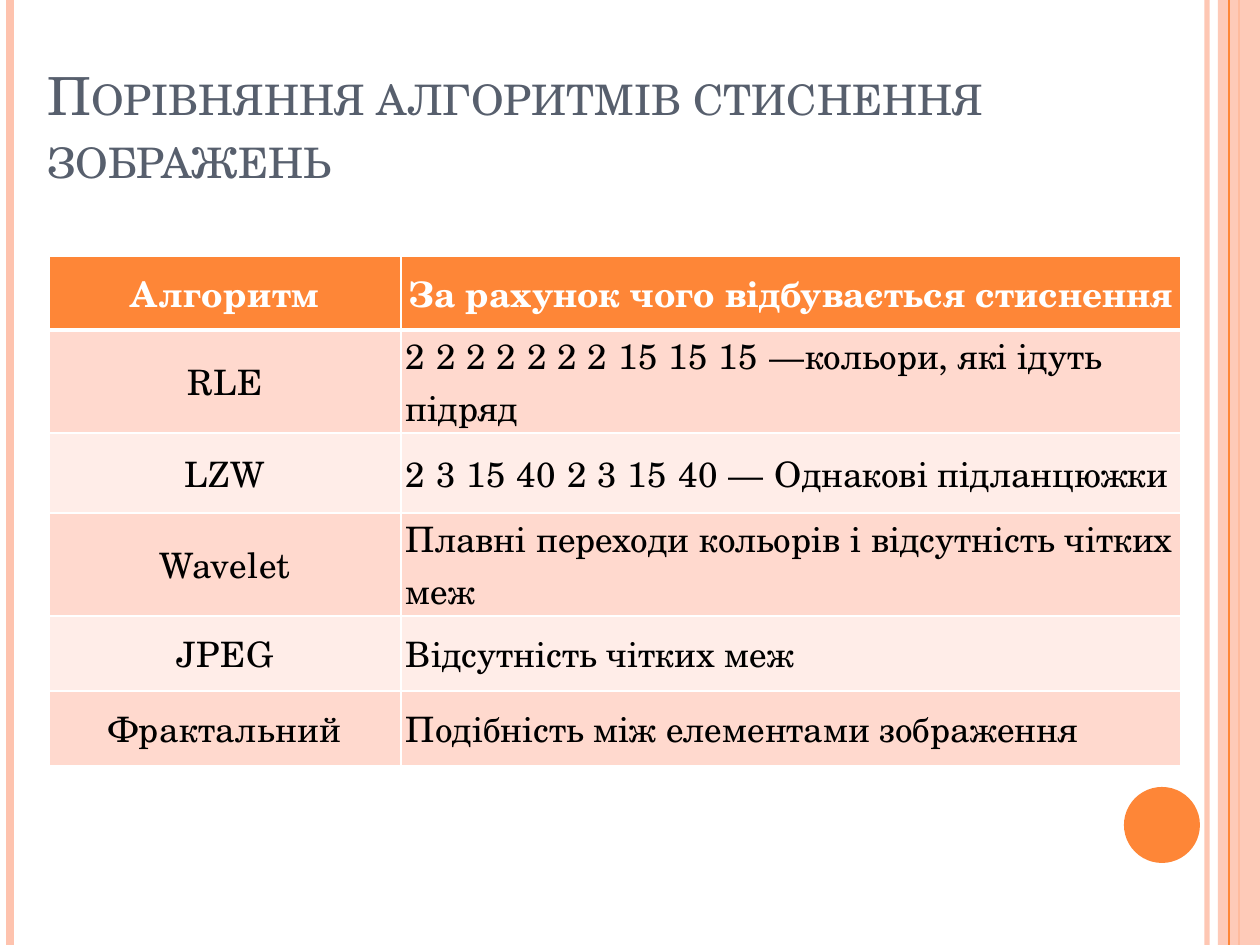
from dataclasses import dataclass

from pptx import Presentation, util as u
from pptx.dml.color import RGBColor
from pptx.enum import shapes, text
from pptx.oxml.ns import qn
from lxml import etree

SCALE = 914400 / 126


@dataclass(frozen=True)
class Theme:
    font: str = "TeX Gyre Schola"
    main: str = "FE8637"
    pale: str = "FEC3AE"
    title: str = "575F6D"
    bands: tuple = ("FFD9CE", "FFEDE8")
    white: str = "FFFFFF"
    black: str = "000000"
    head_size: int = 30
    cell_size: int = 20


T = Theme()
WIDE = 0.3  # letter spacing in points

# Each cell is a list of (words, letter spacing) runs
HEAD = [[("Алгоритм", WIDE)], [("За рахунок чого відбувається стиснення", 0)]]
BODY = [
    ("RLE", [("2 2 2 2 2 2 2 15 15 15 —", WIDE), ("кольори, які ідуть підряд", 0)]),
    ("LZW", [("2 3 15 40 2 3 15 40 — ", WIDE), ("Однакові підланцюжки", 0)]),
    ("Wavelet", [("Плавні переходи кольорів і відсутність чітких меж", 0)]),
    ("JPEG", [("Відсутність чітких меж", 0)]),
    ("Фрактальний", [("Подібність між елементами зображення", 0)]),
]
COLS = (352, 780)
ROWS = (74, 103, 80, 103, 75, 75)  # the taller rows hold two lines
INSET = 5


def px(*vals):
    return [u.Emu(round(v * SCALE)) for v in vals]


def rgb(code):
    return RGBColor.from_string(code)


def sub(node, tag, **attrs):
    item = etree.SubElement(node, qn(tag))
    for key, val in attrs.items():
        item.set(key, str(val))
    return item


def fade(part, percent):
    for color in part.iter(qn("a:srgbClr")):
        sub(color, "a:alpha", val=percent * 1000)


def add_run(para, words, size, color, bold=False, **attrs):
    run = para.add_run()
    run.text = words
    font = run.font
    font.name, font.size, font.bold = T.font, u.Pt(size), bold
    font.color.rgb = rgb(color)
    for key, val in attrs.items():
        run._r.get_or_add_rPr().set(key, str(val))


def add_rule(slide, x, color, weight, alpha=100):
    line = slide.shapes.add_connector(
        shapes.MSO_CONNECTOR.STRAIGHT, *px(x, 0, x, 945))
    line.line.color.rgb = rgb(color)
    line.line.width = u.Pt(weight)
    props = line._element.spPr
    if alpha < 100:
        fade(props, alpha)
    sub(props, "a:effectLst")


def add_solid(slide, kind, box, color, alpha=100):
    shape = slide.shapes.add_shape(kind, *px(*box))
    shape.shadow.inherit = False
    shape.fill.solid()
    shape.fill.fore_color.rgb = rgb(color)
    shape.line.fill.background()
    if alpha < 100:
        fade(shape._element.spPr, alpha)


def add_title(slide, words):
    frame = slide.shapes.add_textbox(*px(35, 38, 1171, 157)).text_frame
    frame.word_wrap = True
    frame.vertical_anchor = text.MSO_ANCHOR.BOTTOM
    add_run(frame.paragraphs[0], words, T.head_size, T.title, cap="small")


def set_edges(cell, top, bottom):
    props = cell._tc.get_or_add_tcPr()
    for side, weight in zip("LRTB", (1, 1, top, bottom)):
        edge = sub(props, "a:ln" + side, w=u.Pt(weight))
        sub(sub(edge, "a:solidFill"), "a:srgbClr", val=T.white)


def fill_cell(cell, runs, row, col):
    head = row == 0
    set_edges(cell, 3 if row == 1 else 1, 3 if head else 1)
    cell.fill.solid()
    cell.fill.fore_color.rgb = rgb(T.main if head else T.bands[(row - 1) % 2])
    cell.margin_left, cell.margin_right = px(INSET, INSET)
    cell.margin_top = cell.margin_bottom = 0
    cell.vertical_anchor = text.MSO_ANCHOR.MIDDLE
    para = cell.text_frame.paragraphs[0]
    centred = head or col == 0
    para.alignment = text.PP_ALIGN.CENTER if centred else text.PP_ALIGN.LEFT
    for words, gap in runs:
        add_run(para, words, T.cell_size, T.white if head else T.black,
                head, spc=round(gap * 100))


def add_grid(slide):
    data = [HEAD] + [[[(name, WIDE)], runs] for name, runs in BODY]
    box = px(49, 256, sum(COLS), sum(ROWS))
    table = slide.shapes.add_table(len(ROWS), len(COLS), *box).table
    table.horz_banding = False
    for col, width in zip(table.columns, px(*COLS)):
        col.width = width
    for row, height in zip(table.rows, px(*ROWS)):
        row.height = height
    for r, cells in enumerate(data):
        for c, runs in enumerate(cells):
            fill_cell(table.cell(r, c), runs, r, c)


def main():
    deck = Presentation()
    deck.slide_width, deck.slide_height = px(1260, 945)
    slide = deck.slides.add_slide(deck.slide_layouts[6])

    # Side stripes and the disc
    add_rule(slide, 1207, T.pale, 3, 93)
    add_rule(slide, 10, T.pale, 4.5)
    add_rule(slide, 1239, T.main, 1.5)
    add_solid(slide, shapes.MSO_SHAPE.RECTANGLE, (1218, 0, 42, 945), T.pale, 87)
    add_rule(slide, 1229, T.main, 0.75)
    add_solid(slide, shapes.MSO_SHAPE.OVAL, (1124, 787, 76, 76), T.main)

    # Title and comparison table
    add_title(slide, "Порівняння алгоритмів стиснення зображень")
    add_grid(slide)
    deck.save("out.pptx")


if __name__ == "__main__":
    main()
